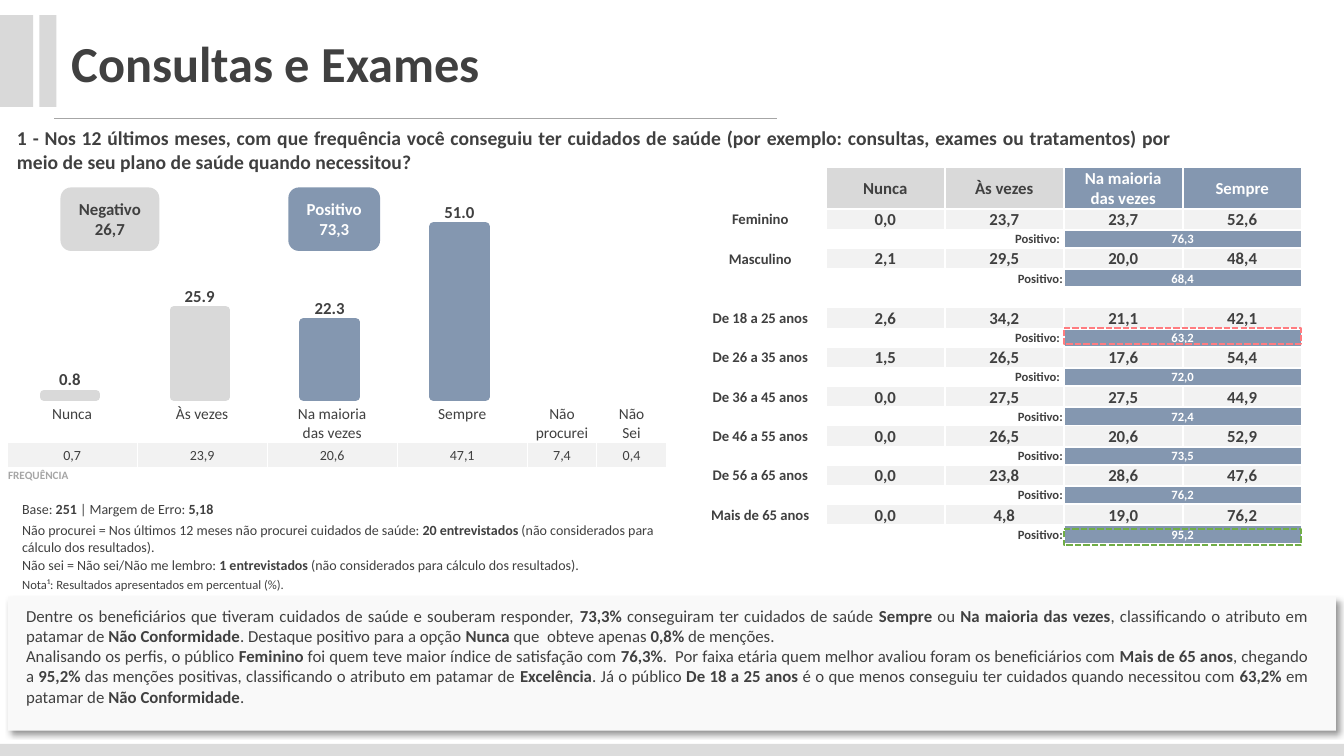
from typing import NamedTuple

from lxml.etree import SubElement
from pptx import Presentation
from pptx.chart.data import CategoryChartData
from pptx.dml.color import RGBColor
from pptx.enum.chart import XL_CHART_TYPE, XL_LABEL_POSITION
from pptx.enum.dml import MSO_LINE
from pptx.enum.shapes import MSO_CONNECTOR, MSO_SHAPE
from pptx.enum.text import MSO_ANCHOR, PP_ALIGN
from pptx.oxml.ns import qn
from pptx.util import Inches, Pt

COLORS = {
    "text": "404040", "white": "FFFFFF", "blue": "8497B0", "gray": "D9D9D9",
    "cell": "F2F2F2", "muted": "A6A6A6", "footer": "DCDCDC", "panel": "F9F9F9",
    "red": "FF7C80", "green": "70AD47", "black": "000000",
}
LEFT, CENTER, RIGHT, JUSTIFY = PP_ALIGN.LEFT, PP_ALIGN.CENTER, PP_ALIGN.RIGHT, PP_ALIGN.JUSTIFY
PLAIN_TABLE = "{2D5ABB26-0587-4C30-8999-92F81FD0307C}"


class Box(NamedTuple):
    x: float
    y: float
    w: float
    h: float


class Style(NamedTuple):
    size: float
    bold: bool = False
    color: str = "text"
    align: PP_ALIGN = LEFT


class Profile(NamedTuple):
    name: str
    answers: str
    positive: str
    label: str = "Positivo:"


class Badge(NamedTuple):
    text: str
    box: Box
    fill: str
    color: str


PROFILES = [
    Profile("Feminino", "0,0 23,7 23,7 52,6", "76,3", "Positivo: "),
    Profile("Masculino", "2,1 29,5 20,0 48,4", "68,4"),
    None,
    Profile("De 18 a 25 anos", "2,6 34,2 21,1 42,1", "63,2", "Positivo: "),
    Profile("De 26 a 35 anos", "1,5 26,5 17,6 54,4", "72,0", "Positivo: "),
    Profile("De 36 a 45 anos", "0,0 27,5 27,5 44,9", "72,4"),
    Profile("De 46 a 55 anos", "0,0 26,5 20,6 52,9", "73,5"),
    Profile("De 56 a 65 anos", "0,0 23,8 28,6 47,6", "76,2"),
    Profile("Mais de 65 anos", "0,0 4,8 19,0 76,2", "95,2"),
]
BADGES = [
    Badge("Negativo 26,7", Box(0.6, 1.86, 0.98, 0.63), "gray", "text"),
    Badge("Positivo 73,3", Box(2.86, 1.86, 0.91, 0.63), "blue", "white"),
]
FREQUENCY = {"Nunca": "0,7", "Às vezes": "23,9", "Na maioria\ndas vezes": "20,6",
             "Sempre": "47,1", "Não procurei": "7,4", "Não\nSei": "0,4"}
NOTES = [
    "Base: **251** | Margem de Erro: **5,18**",
    "Não procurei = Nos últimos 12 meses não procurei cuidados de saúde: "
    "**20 entrevistados** (não considerados para cálculo dos resultados).",
    "Não sei = Não sei/Não me lembro: **1 entrevistados** "
    "(não considerados para cálculo dos resultados).",
    "Nota¹: Resultados apresentados em percentual (%).",
]
QUESTION = ("1 - Nos 12 últimos meses, com que frequência você conseguiu ter cuidados de saúde "
            "(por exemplo: consultas, exames ou tratamentos) por meio de seu plano de saúde "
            "quando necessitou?")
ANALYSIS = (
    "Dentre os beneficiários que tiveram cuidados de saúde e souberam responder, **73,3%** "
    "conseguiram ter cuidados de saúde **Sempre** ou **Na maioria das vezes**, classificando o "
    "atributo em patamar de **Não Conformidade**. Destaque positivo para a opção **Nunca** "
    "que  obteve apenas **0,8% **de menções. \n"
    "Analisando os perfis, o público **Feminino** foi quem teve maior índice de satisfação com "
    "**76,3%**.  Por faixa etária quem melhor avaliou foram os beneficiários com "
    "**Mais de 65 anos**, chegando a **95,2%** das menções positivas, classificando o atributo "
    "em patamar de **Excelência**. Já o público **De 18 a 25 anos **é o que menos conseguiu ter "
    "cuidados quando necessitou com **63,2% **em patamar de **Não Conformidade**.")


def rgb(name: str) -> RGBColor:
    return RGBColor.from_string(COLORS[name])


def write(tf, text: str, style: Style) -> None:
    """Fill a frame: newline starts a paragraph, | breaks a header line, ** toggles bold."""
    for i, line in enumerate(text.split("\n")):
        p = tf.paragraphs[0] if i == 0 else tf.add_paragraph()
        p.alignment = style.align
        for j, chunk in enumerate(line.split("**")):
            if chunk:
                r = p.add_run()
                r.text = chunk
                values = {"name": "Calibri", "size": Pt(style.size), "bold": style.bold or j % 2 == 1}
                for key, value in values.items():
                    setattr(r.font, key, value)
                r.font.color.rgb = rgb(style.color)


def add_text(s, box: Box, text: str, style: Style) -> None:
    tf = s.shapes.add_textbox(*map(Inches, box)).text_frame
    tf.word_wrap = True
    write(tf, text, style)


def add_block(s, box: Box, fill: str | None, kind=MSO_SHAPE.RECTANGLE):
    sp = s.shapes.add_shape(kind, *map(Inches, box))
    sp.shadow.inherit = False
    sp.line.fill.background()
    if fill:
        sp.fill.solid()
        sp.fill.fore_color.rgb = rgb(fill)
    else:
        sp.fill.background()
    return sp


def add_table(s, x: float, y: float, cols: list[float], rows: list[float], border: float = 0):
    frame = s.shapes.add_table(len(rows), len(cols), *map(Inches, (x, y, sum(cols), sum(rows))))
    table = frame.table
    table.first_row = table.horz_banding = False
    table._tbl.tblPr.find(qn("a:tableStyleId")).text = PLAIN_TABLE
    for lines, sizes, attr in ((table.columns, cols, "width"), (table.rows, rows, "height")):
        for line, size in zip(lines, sizes):
            setattr(line, attr, Inches(size))
    for cell in table.iter_cells():
        for side in ("left", "top", "right", "bottom"):
            setattr(cell, f"margin_{side}", Inches(0 if side == "bottom" else 0.01))
        tcPr = cell._tc.get_or_add_tcPr()
        for tag in ("lnL", "lnR", "lnT", "lnB") if border else ():
            ln = SubElement(tcPr, qn(f"a:{tag}"), w=str(Pt(border)))
            SubElement(SubElement(ln, qn("a:solidFill")), qn("a:srgbClr"), val=COLORS["white"])
        cell.fill.background()
        SubElement(cell.text_frame.paragraphs[0]._p, qn("a:endParaRPr"), sz="900")
    return table


def fill_cell(cell, text: str, style: Style, fill: str | None = None, anchor=MSO_ANCHOR.MIDDLE) -> None:
    cell.vertical_anchor = anchor
    if fill:
        cell.fill.solid()
        cell.fill.fore_color.rgb = rgb(fill)
    write(cell.text_frame, text, style)


def add_frequency_chart(s) -> None:
    data = CategoryChartData(number_format="0.0")
    data.categories = ["1", "2", "3", "4"]
    data.add_series("Series 1", (51, 22.3, 25.9, 0.8))
    chart = s.shapes.add_chart(XL_CHART_TYPE.COLUMN_CLUSTERED,
                               *map(Inches, (-0.21, 1.71, 5.5, 2.77)), data).chart
    chart.has_title = chart.has_legend = False
    chart.font.name, chart.font.size = "Calibri", Pt(10)
    chart.font.color.rgb = rgb("black")
    chart.category_axis.reverse_order = True
    axis = chart.value_axis
    axis.minimum_scale, axis.maximum_scale = 0, 60
    axis.has_major_gridlines = False
    axis.visible = chart.category_axis.visible = False

    plot = chart.plots[0]
    plot.gap_width, plot.overlap, plot.vary_by_categories = 150, -25, False
    for i, color in enumerate(("blue", "blue", "gray", "gray")):
        bar = plot.series[0].points[i].format
        bar.fill.solid()
        bar.fill.fore_color.rgb = bar.line.color.rgb = rgb(color)
        bar.line.width = Pt(6)
    for ln in chart._chartSpace.iter(qn("a:ln")):
        SubElement(ln, qn("a:round"))
    plot.has_data_labels = True
    labels = plot.data_labels
    values = {"show_value": True, "number_format": "0.0", "number_format_is_linked": False,
              "position": XL_LABEL_POSITION.OUTSIDE_END}
    for key, value in values.items():
        setattr(labels, key, value)
    labels.font.name, labels.font.size, labels.font.bold = "Calibri", Pt(12), True
    labels.font.color.rgb = rgb("text")

    area = chart._chartSpace.chart.plotArea
    for old in area.findall(qn("c:layout")):
        area.remove(old)
    layout = SubElement(area, qn("c:layout"))
    area.insert(0, layout)
    manual = SubElement(layout, qn("c:manualLayout"))
    for tag, val in (("layoutTarget", "inner"), ("xMode", "edge"), ("yMode", "edge"),
                     ("x", "0.047"), ("y", "0.086"), ("w", "0.937"), ("h", "0.718")):
        SubElement(manual, qn(f"c:{tag}"), val=val)


def add_profile_table(s) -> None:
    rows = [0.41]
    for profile in PROFILES:
        rows += [0.21, 0.18] if profile else [0.2]
    table = add_table(s, 6.89, 1.66, [1.3] + [1.18] * 4, rows, 1.5)
    strong = Style(12, True, align=CENTER)
    heads = ("Nunca", "Às vezes", "Na maioria\ndas vezes", "Sempre")
    for c, head in enumerate(heads, 1):
        good = c > 2
        fill_cell(table.cell(0, c), head, strong._replace(color="white" if good else "text"),
                  "blue" if good else "gray")
    r = 1
    for i, profile in enumerate(PROFILES):
        detail = r + 1 if profile else r
        table.cell(detail, 3).merge(table.cell(detail, 4))
        label_col = 1 if i < 5 else 2
        if label_col == 1:
            table.cell(detail, 1).merge(table.cell(detail, 2))
        if profile:
            fill_cell(table.cell(r, 0), profile.name, strong._replace(size=10.5))
            for c, answer in enumerate(profile.answers.split(), 1):
                fill_cell(table.cell(r, c), answer, strong, "cell")
            fill_cell(table.cell(detail, label_col), profile.label, Style(9, True, align=RIGHT))
            fill_cell(table.cell(detail, 3), profile.positive, Style(9, True, "white", CENTER), "blue")
        r = detail + 1


def add_shadow(sp) -> None:
    shadow = SubElement(sp._element.spPr.find(qn("a:effectLst")), qn("a:outerShdw"),
                        blurRad=str(Pt(4)), dist=str(Pt(3)), dir="2700000", algn="tl")
    SubElement(SubElement(shadow, qn("a:srgbClr"), val=COLORS["black"]), qn("a:alpha"), val="40000")


def main() -> None:
    prs = Presentation()
    prs.slide_width, prs.slide_height = Inches(13.33), Inches(7.5)
    s = prs.slides.add_slide(prs.slide_layouts[6])

    add_block(s, Box(0, 7.38, 13.33, 0.12), "footer")
    rule = s.shapes.add_connector(MSO_CONNECTOR.STRAIGHT, *map(Inches, (0.54, 1.17, 7.71, 1.17)))
    rule.line.color.rgb, rule.line.width = rgb("muted"), Pt(0.5)
    SubElement(rule._element.spPr, qn("a:effectLst"))
    for x, w in ((0, 0.33), (0.39, 0.17)):
        add_block(s, Box(x, 0.15, w, 0.91), "gray")

    add_frequency_chart(s)
    add_shadow(add_block(s, Box(0.08, 5.92, 13.17, 1.33), "panel"))
    add_text(s, Box(0.07, 1.2, 11.65, 0.58), QUESTION, Style(14, True, align=JUSTIFY))

    notes = add_table(s, 0.21, 4.96, [6.54], [0.21] * 4)
    for i, (note, size) in enumerate(zip(NOTES, (10, 10, 10, 9))):
        fill_cell(notes.cell(i, 0), note, Style(size), anchor=MSO_ANCHOR.TOP)

    freq = add_table(s, 0.07, 4.01, [1.29] * 4 + [0.69] * 2, [0.38, 0.25, 0.24], 1)
    for c, (answer, value) in enumerate(FREQUENCY.items()):
        fill_cell(freq.cell(0, c), answer, Style(11, align=CENTER), anchor=MSO_ANCHOR.TOP)
        fill_cell(freq.cell(1, c), value, Style(10, align=CENTER), "cell")
    freq.cell(2, 0).merge(freq.cell(2, 5))
    fill_cell(freq.cell(2, 0), "FREQUÊNCIA", Style(8, True, "muted"), anchor=MSO_ANCHOR.TOP)

    add_text(s, Box(0.61, 0.27, 4.3, 0.71), "Consultas e Exames", Style(36, True))
    add_profile_table(s)
    add_text(s, Box(0.16, 5.96, 12.91, 1.11), ANALYSIS, Style(12, align=JUSTIFY))
    for y, color in ((3.25, "red"), (5.25, "green")):
        mark = add_block(s, Box(10.55, y, 2.35, 0.16), None)
        mark.line.color.rgb, mark.line.width = rgb(color), Pt(1.5)
        mark.line.dash_style = MSO_LINE.SQUARE_DOT
    for badge in BADGES:
        sp = add_block(s, badge.box, badge.fill, MSO_SHAPE.ROUNDED_RECTANGLE)
        write(sp.text_frame, badge.text, Style(12, True, badge.color, CENTER))
    prs.save("out.pptx")


if __name__ == "__main__":
    main()
